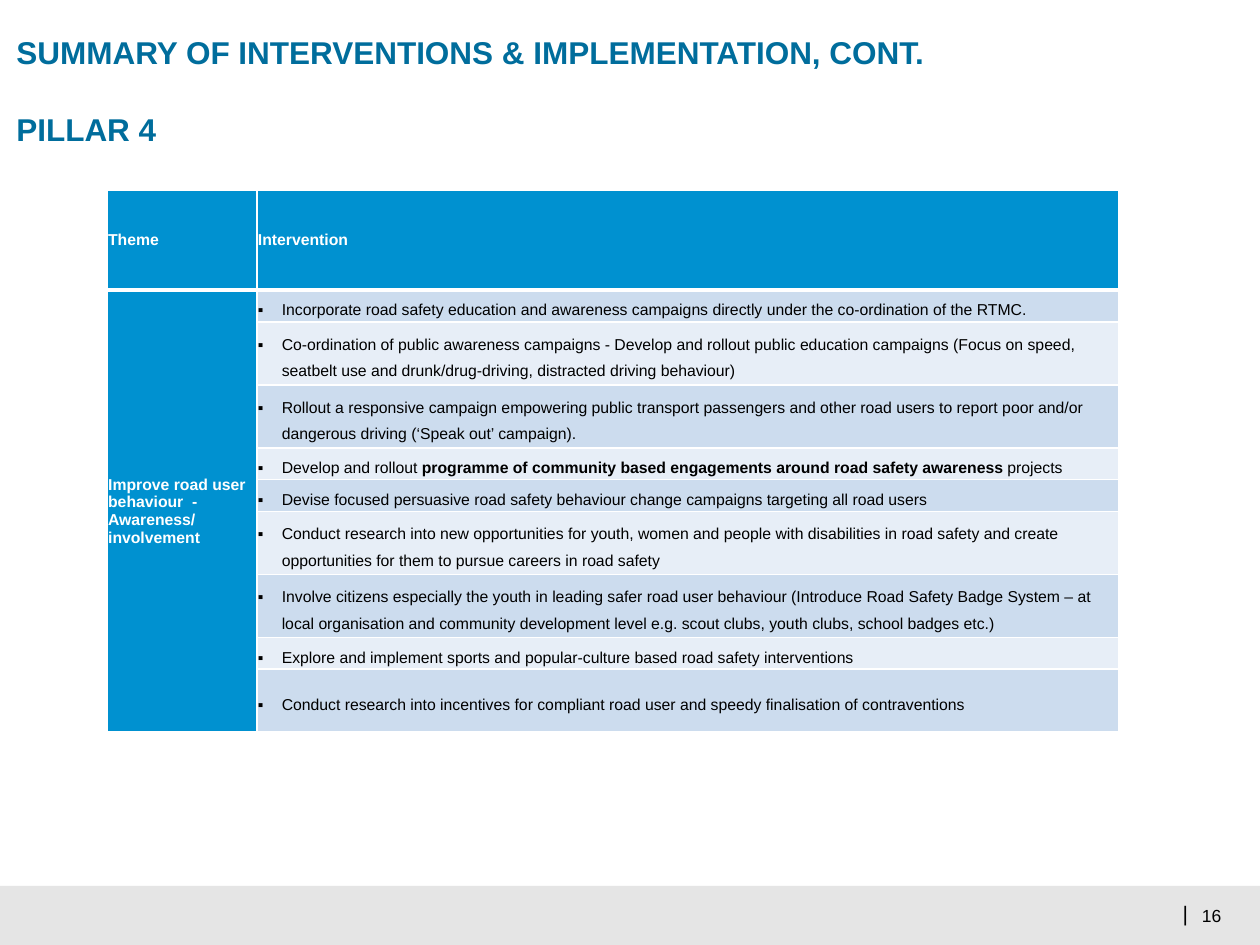
from lxml import etree
from pptx import Presentation
from pptx.dml.color import RGBColor
from pptx.enum.shapes import MSO_SHAPE
from pptx.enum.text import MSO_ANCHOR, MSO_AUTO_SIZE, PP_ALIGN
from pptx.oxml.ns import qn
from pptx.util import Cm, Pt

RECT = MSO_SHAPE.RECTANGLE
TOP, MID = MSO_ANCHOR.TOP, MSO_ANCHOR.MIDDLE
LEFT, RIGHT = PP_ALIGN.LEFT, PP_ALIGN.RIGHT
NO_FIT = MSO_AUTO_SIZE.NONE

TITLE = ["SUMMARY OF INTERVENTIONS & IMPLEMENTATION, CONT.", "PILLAR 4"]
HEADS = ["Theme", "Intervention"]
THEME = "Improve road user behaviour  - Awareness/ involvement"
# Each entry: row height in cm, then text pieces; every second piece is bold.
ROWS = [
    (0.64, "Incorporate road safety education and awareness campaigns directly "
           "under the co-ordination of the RTMC."),
    (1.27, "Co-ordination of public awareness campaigns - Develop and rollout "
           "public education campaigns (Focus on speed, seatbelt use and "
           "drunk/drug-driving, distracted driving behaviour)"),
    (1.27, "Rollout a responsive campaign empowering public transport passengers "
           "and other road users to report poor and/or dangerous driving "
           "(‘Speak out’ campaign)."),
    (0.64, "Develop and rollout ",
           "programme of community based engagements around road safety awareness ",
           "projects"),
    (0.64, "Devise focused persuasive road safety behaviour change campaigns "
           "targeting all road users"),
    (1.27, "Conduct research into new opportunities for youth, women and people "
           "with disabilities in road safety and create opportunities for them "
           "to pursue careers in road safety"),
    (1.27, "Involve citizens especially the youth in leading safer road user "
           "behaviour (Introduce Road Safety Badge System – at local organisation "
           "and community development level e.g. scout clubs, youth clubs, school "
           "badges etc.)"),
    (0.64, "Explore and implement sports and popular-culture based road safety "
           "interventions"),
    (1.27, "Conduct research into incentives for compliant road user and speedy "
           "finalisation of contraventions"),
]
BLUE, BANDS = "0091D0", ("CCDCEE", "E7EEF7")


def color(code):
    return RGBColor.from_string(code)


def paint(fill, code):
    fill.solid()
    fill.fore_color.rgb = color(code)


def write(par, *parts, size=9, ink="000000", bold=False, align=LEFT,
          line=1.0, before=0, bullet=None):
    """Fill a paragraph; every second part switches the bold setting."""
    if bullet:
        props = par._p.get_or_add_pPr()
        props.set("marL", str(Cm(0.48)))
        props.set("indent", str(-Cm(0.48)))
        etree.SubElement(props, qn("a:buFont")).set("typeface", "Arial")
        etree.SubElement(props, qn("a:buChar")).set("char", bullet)
    par.alignment = align
    par.line_spacing = line
    par.space_before = Pt(before)
    for i, part in enumerate(parts):
        run = par.add_run()
        run.text = part
        font = run.font
        font.name, font.size = "Arial", Pt(size)
        font.bold = bold != (i % 2 == 1)
        font.color.rgb = color(ink)


def set_frame(frame, anchor, wrap):
    frame.margin_left = frame.margin_right = 0
    frame.margin_top = frame.margin_bottom = 0
    frame.vertical_anchor = anchor
    frame.word_wrap = wrap
    frame.auto_size = NO_FIT


def add_title(slide):
    title = slide.shapes.title
    title.left, title.top = Cm(0.33), Cm(0.66)
    title.width, title.height = Cm(24.43), Cm(2.31)
    frame = title.text_frame
    set_frame(frame, TOP, True)
    for i, text in enumerate(TITLE):
        par = frame.add_paragraph() if i else frame.paragraphs[0]
        write(par, text, size=18, ink="006D9C", bold=True,
              before=22.7 if i else 0)


def add_label(slide, text, x, y, w, h, **style):
    box = slide.shapes.add_textbox(Cm(x), Cm(y), Cm(w), Cm(h))
    set_frame(box.text_frame, MID, False)
    write(box.text_frame.paragraphs[0], text, **style)


def add_footer(slide):
    bar = slide.shapes.add_shape(RECT, 0, Cm(17.86), Cm(25.4), Cm(1.19))
    bar.shadow.inherit = False
    paint(bar.fill, "E5E5E5")
    bar.line.fill.background()
    add_label(slide, "16", 24.23, 18.24, 0.46, 0.43, size=10)
    add_label(slide, "|", 23.85, 18.16, 0.1, 0.51, size=12, align=RIGHT)


def set_edges(cell, top=1, bottom=1):
    """Draw white cell borders, widths in points."""
    props = cell._tc.get_or_add_tcPr()
    for i, (side, width) in enumerate(
            [("L", 1), ("R", 1), ("T", top), ("B", bottom)]):
        edge = etree.Element(qn(f"a:ln{side}"), w=str(Pt(width)))
        fill = etree.SubElement(edge, qn("a:solidFill"))
        etree.SubElement(fill, qn("a:srgbClr")).set("val", "FFFFFF")
        props.insert(i, edge)


def fill_cell(cell, back, *parts, **style):
    cell.margin_left = cell.margin_right = Cm(0.02)
    cell.margin_top = cell.margin_bottom = 0
    cell.vertical_anchor = MID
    paint(cell.fill, back)
    write(cell.text_frame.paragraphs[0], *parts, **style)


def add_grid(slide):
    highs = [2.01] + [row[0] for row in ROWS]
    grid = slide.shapes.add_table(len(highs), 2, Cm(2.16), Cm(3.84),
                                  Cm(20.39), Cm(sum(highs))).table
    grid.first_row = grid.horz_banding = False
    for col, wide in zip(grid.columns, (3.02, 17.37)):
        col.width = Cm(wide)
    for row, high in zip(grid.rows, highs):
        row.height = Cm(high)

    head = {"ink": "FFFFFF", "bold": True}
    for i, text in enumerate(HEADS):
        fill_cell(grid.cell(0, i), BLUE, text, **head)
    theme = grid.cell(1, 0)
    theme.merge(grid.cell(len(ROWS), 0))
    fill_cell(theme, BLUE, THEME, **head)
    for i, (_, *parts) in enumerate(ROWS):
        fill_cell(grid.cell(i + 1, 1), BANDS[i % 2], *parts,
                  line=1.5, bullet="▪")
    for i, row in enumerate(grid.rows):
        for cell in row.cells:
            set_edges(cell, top=3 if i == 1 else 1, bottom=3 if i == 0 else 1)


def main():
    deck = Presentation()
    deck.slide_width, deck.slide_height = Cm(25.4), Cm(19.05)
    slide = deck.slides.add_slide(deck.slide_layouts[5])
    add_footer(slide)
    add_title(slide)
    add_grid(slide)
    deck.save("out.pptx")


if __name__ == "__main__":
    main()
